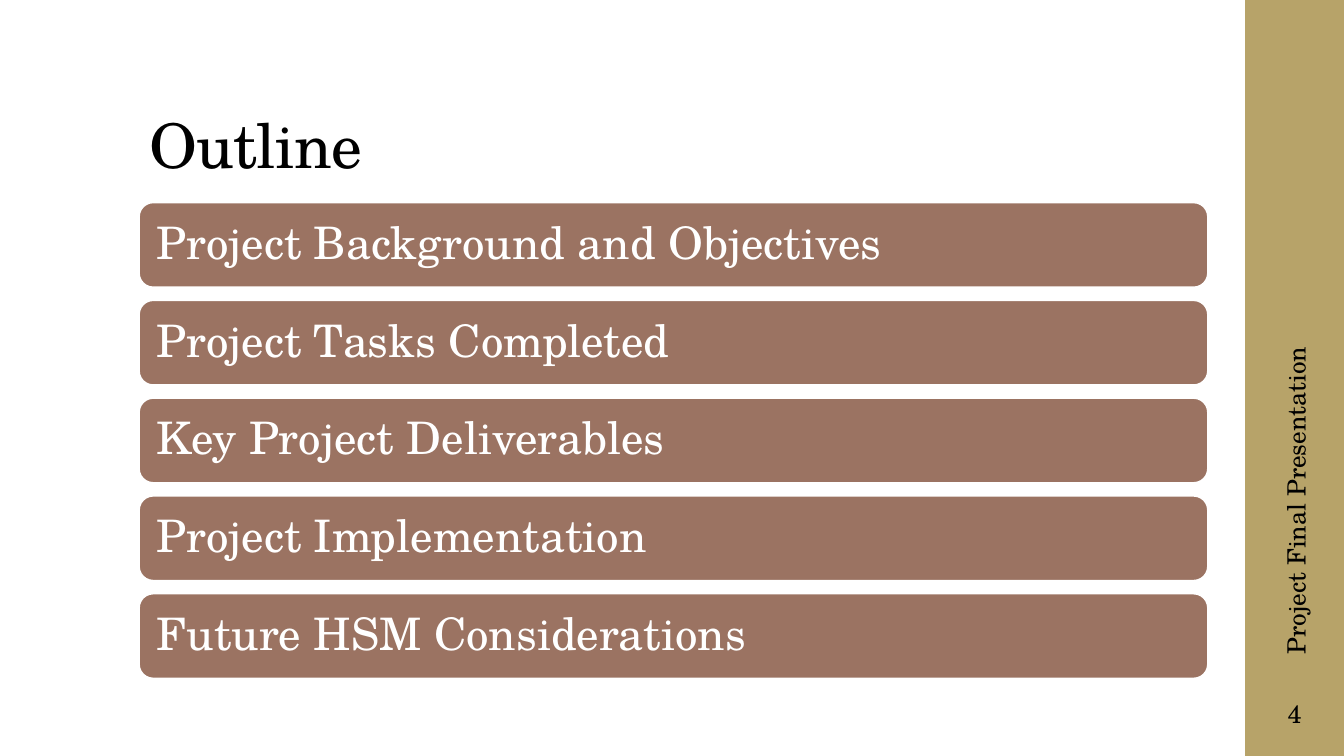
from dataclasses import dataclass

from pptx import Presentation
from pptx import util as u
from pptx.dml.color import RGBColor
from pptx.enum import shapes, text


@dataclass(frozen=True)
class Theme:
    font: str = "TeX Gyre Schola"
    ink: str = "000000"
    paper: str = "FFFFFF"
    band: str = "B7A369"
    bar: str = "9B7362"
    title_size: int = 44
    topic_size: int = 32
    label_size: int = 18


THEME = Theme()
WIDTH, HEIGHT = 13.33, 7.5
LEFT, CONTENT_WIDTH = 1.38, 10.6
TITLE_BOX = (LEFT, 0.4, CONTENT_WIDTH, 1.45)
TOPICS_BOX = (LEFT, 2.01, CONTENT_WIDTH, 4.72)
SIDEBAR_BOX = (12.35, 0, WIDTH - 12.35, HEIGHT)
BAR_HEIGHT = 0.84
TOPICS = [
    "Project Background and Objectives",
    "Project Tasks Completed",
    "Key Project Deliverables",
    "Project Implementation",
    "Future HSM Considerations",
]


def inches(box):
    return [u.Inches(length) for length in box]


def write(shape, wording, size, color, anchor=text.MSO_ANCHOR.MIDDLE,
          align=text.PP_ALIGN.LEFT, spacing=1.0):
    """Set the wording of a shape and return its frame."""
    frame = shape.text_frame
    frame.text = wording
    frame.word_wrap = True
    frame.auto_size = text.MSO_AUTO_SIZE.NONE
    frame.vertical_anchor = anchor
    paragraph = frame.paragraphs[0]
    paragraph.alignment = align
    paragraph.line_spacing = spacing
    font = paragraph.runs[0].font
    font.name, font.size = THEME.font, u.Pt(size)
    font.color.rgb = RGBColor.from_string(color)
    return frame


def set_insets(frame, inset):
    frame.margin_left = frame.margin_right = u.Inches(inset)
    frame.margin_top = frame.margin_bottom = u.Inches(inset)


def add_filled(slide, preset, box, color):
    shape = slide.shapes.add_shape(preset, *inches(box))
    shape.shadow.inherit = False
    shape.fill.solid()
    shape.fill.fore_color.rgb = RGBColor.from_string(color)
    return shape


def place_title(slide, box, wording):
    title = slide.shapes.title
    title.left, title.top, title.width, title.height = inches(box)
    frame = write(title, wording, THEME.title_size, THEME.ink,
                  anchor=text.MSO_ANCHOR.BOTTOM, spacing=0.9)
    frame.paragraphs[0].runs[0].font._element.set("spc", "-50")


def add_topics(slide, box, topics):
    """Stack one bar per topic so that the bars fill the height of the box."""
    left, top, width, height = box
    pitch = (height - BAR_HEIGHT) / (len(topics) - 1)
    for row, topic in enumerate(topics):
        bar = add_filled(slide, shapes.MSO_SHAPE.ROUNDED_RECTANGLE,
                         (left, top + row * pitch, width, BAR_HEIGHT), THEME.bar)
        bar.line.color.rgb = RGBColor.from_string(THEME.paper)
        bar.line.width = u.Pt(1.1)
        frame = write(bar, topic, THEME.topic_size, THEME.paper, spacing=0.9)
        set_insets(frame, 0.13)


def add_sidebar(slide, box, label, number):
    left, top, width, height = box
    band = add_filled(slide, shapes.MSO_SHAPE.RECTANGLE, box, THEME.band)
    band.line.fill.background()

    label_length, label_depth = 3.92, 0.4
    center_x, center_y = left + 0.5, top + 4.63
    footer = slide.shapes.add_textbox(*inches((
        center_x - label_length / 2, center_y - label_depth / 2,
        label_length, label_depth)))
    footer.rotation = 270
    write(footer, label, THEME.label_size, THEME.ink)

    page = slide.shapes.add_textbox(
        *inches((left, top + 0.9 * height, width, 0.65)))
    frame = write(page, number, THEME.label_size, THEME.ink,
                  align=text.PP_ALIGN.CENTER)
    set_insets(frame, 0.05)


def main():
    deck = Presentation()
    deck.slide_width, deck.slide_height = inches((WIDTH, HEIGHT))
    slide = deck.slides.add_slide(deck.slide_layouts.get_by_name("Title Only"))
    add_sidebar(slide, SIDEBAR_BOX, "Project Final Presentation", "4")
    place_title(slide, TITLE_BOX, "Outline")
    add_topics(slide, TOPICS_BOX, TOPICS)
    deck.save("out.pptx")


if __name__ == "__main__":
    main()
